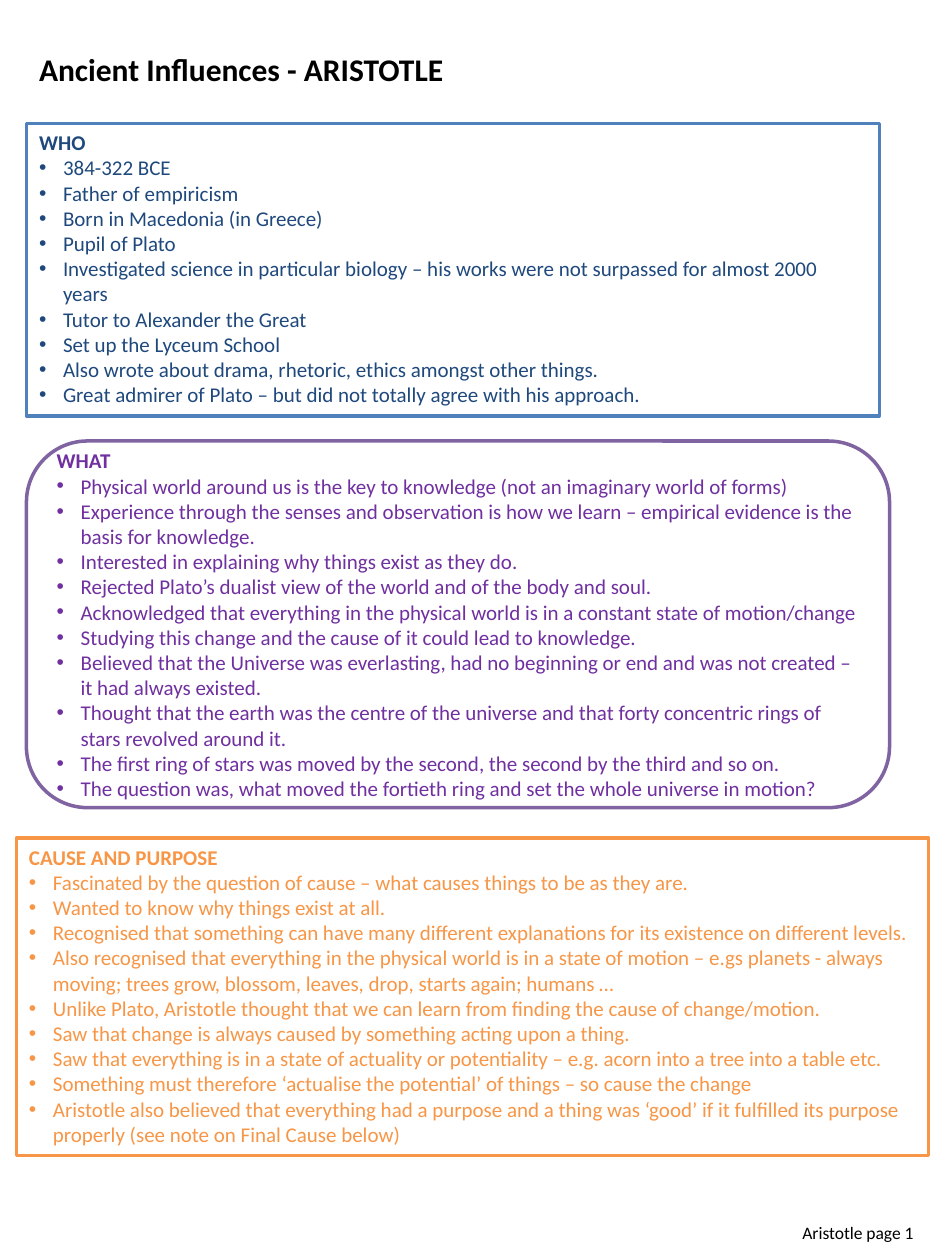
from lxml import etree
from pptx import Presentation
from pptx.dml.color import RGBColor
from pptx.enum.shapes import MSO_SHAPE
from pptx.enum.text import MSO_ANCHOR, MSO_AUTO_SIZE, PP_ALIGN
from pptx.oxml.ns import qn
from pptx.util import Inches, Pt

ROUND = MSO_SHAPE.ROUNDED_RECTANGLE
TOP, MID = MSO_ANCHOR.TOP, MSO_ANCHOR.MIDDLE
LEFT = PP_ALIGN.LEFT
FIXED = MSO_AUTO_SIZE.NONE

WHO = [
    "384-322 BCE",
    "Father of empiricism",
    "Born in Macedonia (in Greece)",
    "Pupil of Plato",
    "Investigated science in particular biology – his works were not surpassed for almost 2000 years",
    "Tutor to Alexander the Great",
    "Set up the Lyceum School",
    "Also wrote about drama, rhetoric, ethics amongst other things.",
    "Great admirer of Plato – but did not totally agree with his approach.",
]
WHAT = [
    "Physical world around us is the key to knowledge (not an imaginary world of forms)",
    "Experience through the senses and observation is how we learn – empirical evidence is the basis for knowledge.",
    "Interested in explaining why things exist as they do.",
    "Rejected Plato’s dualist view of the world and of the body and soul.",
    "Acknowledged that everything in the physical world is in a constant state of motion/change",
    "Studying this change and the cause of it could lead to knowledge.",
    "Believed that the Universe was everlasting, had no beginning or end and was not created – it had always existed.",
    "Thought that the earth was the centre of the universe and that forty concentric rings of stars revolved around it.",
    "The first ring of stars was moved by the second, the second by the third and so on.",
    "The question was, what moved the fortieth ring and set the whole universe in motion?",
]
CAUSE = [
    "Fascinated by the question of cause – what causes things to be as they are.",
    "Wanted to know why things exist at all.",
    "Recognised that something can have many different explanations for its existence on different levels.",
    "Also recognised that everything in the physical world is in a state of motion – e.gs planets - always "
    "moving; trees grow, blossom, leaves, drop, starts again; humans …",
    "Unlike Plato, Aristotle thought that we can learn from finding the cause of change/motion.",
    "Saw that change is always caused by something acting upon a thing.",
    "Saw that everything is in a state of actuality or potentiality – e.g. acorn into a tree into a table etc.",
    "Something must therefore ‘actualise the potential’ of things – so cause the change",
    "Aristotle also believed that everything had a purpose and a thing was ‘good’ if it fulfilled its purpose "
    "properly (see note on Final Cause below)",
]


def paint(part, code):
    """Give a fill, or the fill of a line, one solid colour."""
    part.solid()
    part.fore_color.rgb = RGBColor.from_string(code)


def write(para, text, size, code, bold=False):
    para.alignment = LEFT
    para.space_before = Pt(0)
    run = para.add_run()
    run.text = text
    run.font.name = "Calibri"
    run.font.size = Pt(size)
    run.font.bold = bold
    paint(run.font.fill, code)


deck = Presentation()
deck.slide_width, deck.slide_height = Inches(7.5), Inches(10)
slide = deck.slides.add_slide(deck.slide_layouts[3])
title, first, last = slide.placeholders
middle = slide.shapes.add_shape(ROUND, 0, 0, 0, 0)
middle.shadow.inherit = False
foot = slide.shapes.add_textbox(0, 0, 0, 0)

# Left, top, width and height in inches
spots = [
    (title, 0.21, 0.35, 3.44, 0.4),
    (first, 0.21, 0.98, 6.77, 2.32),
    (middle, 0.21, 3.5, 6.85, 2.91),
    (last, 0.13, 6.65, 7.24, 2.52),
    (foot, 6.27, 9.65, 1.1, 0.27),
]
for box, *spot in spots:
    box.left, box.top, box.width, box.height = map(Inches, spot)
    frame = box.text_frame
    frame.auto_size = FIXED
    frame.word_wrap = box not in (title, foot)
    frame.vertical_anchor = MID if box is middle else TOP

write(title.text_frame.paragraphs[0], "Ancient Influences - ARISTOTLE", 18, "000000", True)
write(foot.text_frame.paragraphs[0], "Aristotle page 1", 10, "000000")

panels = [
    (first, "WHO", WHO, "4F81BD", "1F497D"),
    (middle, "WHAT", WHAT, "8064A2", "7030A0"),
    (last, "CAUSE AND PURPOSE", CAUSE, "F79646", "F79646"),
]
for box, head, items, edge, ink in panels:
    paint(box.fill, "FFFFFF")
    paint(box.line.fill, edge)
    box.line.width = Pt(2)
    frame = box.text_frame
    para = frame.paragraphs[0]
    props = para._p.get_or_add_pPr()
    props.set("marL", "0")
    props.set("indent", "0")
    etree.SubElement(props, qn("a:buNone"))
    write(para, head, 12, ink, True)
    for item in items:
        para = frame.add_paragraph()
        props = para._p.get_or_add_pPr()
        props.set("marL", str(Inches(0.19)))
        props.set("indent", str(-Inches(0.19)))
        etree.SubElement(props, qn("a:buFont"), typeface="Arial")
        etree.SubElement(props, qn("a:buChar"), char="•")
        write(para, item, 12, ink)

deck.save("out.pptx")
